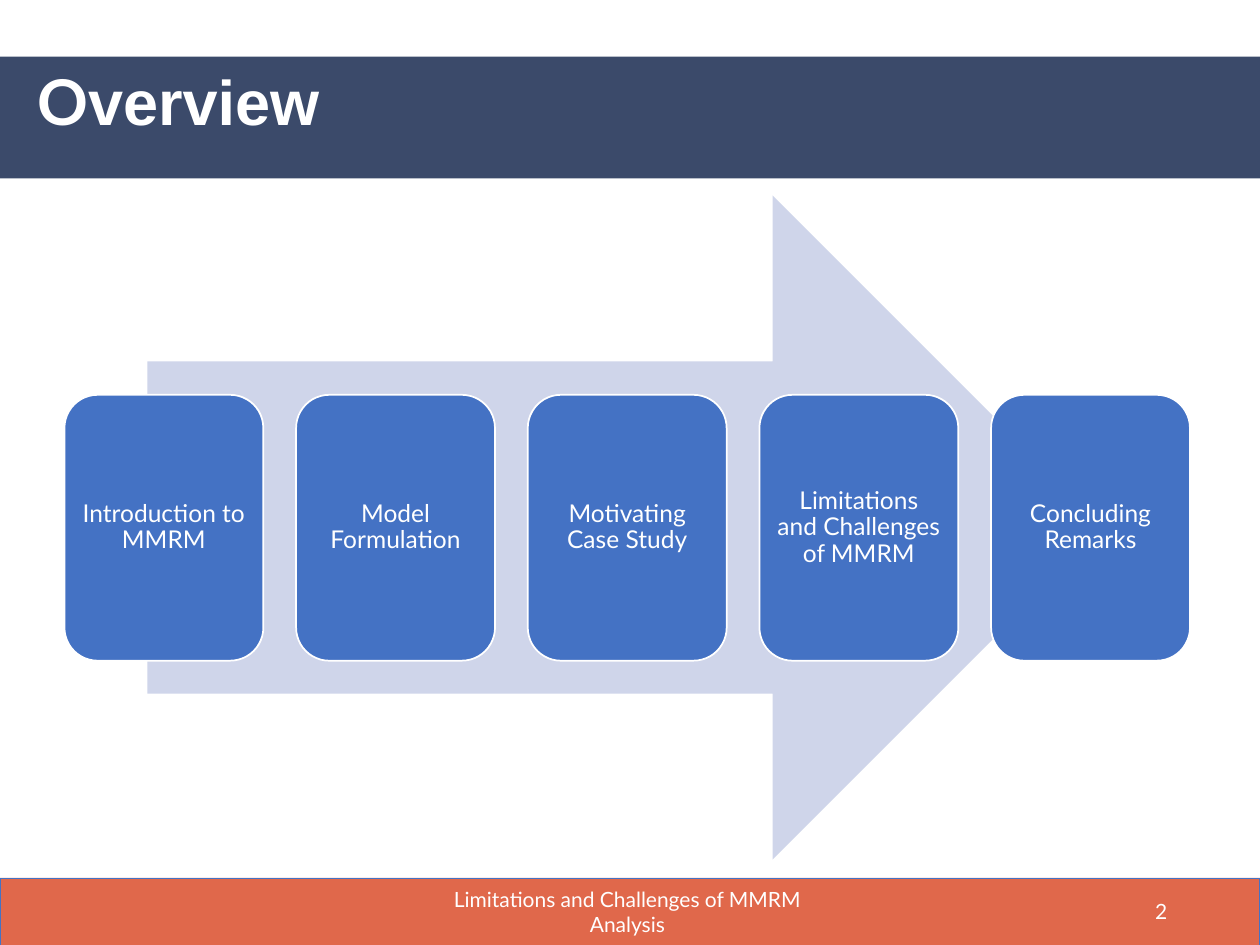
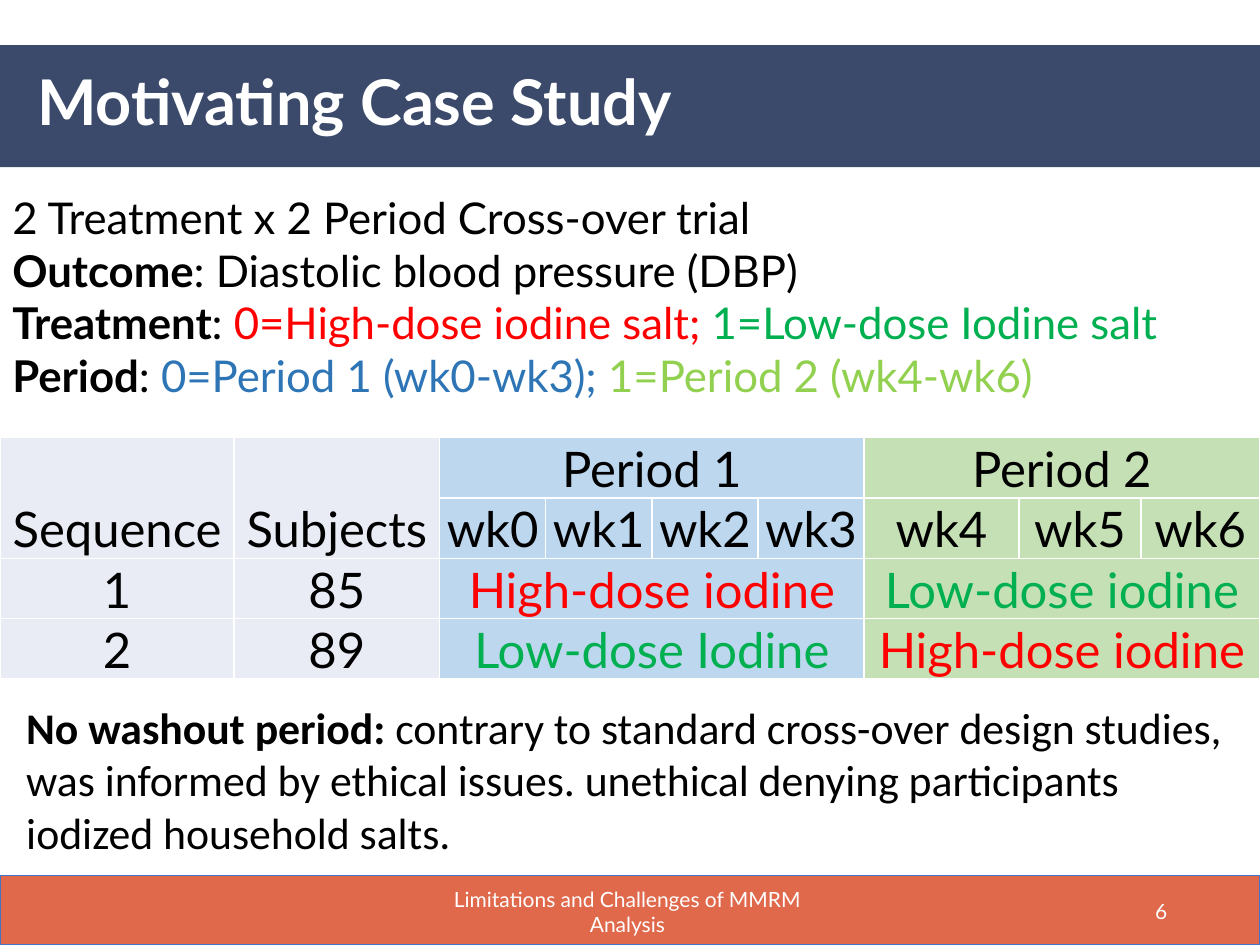
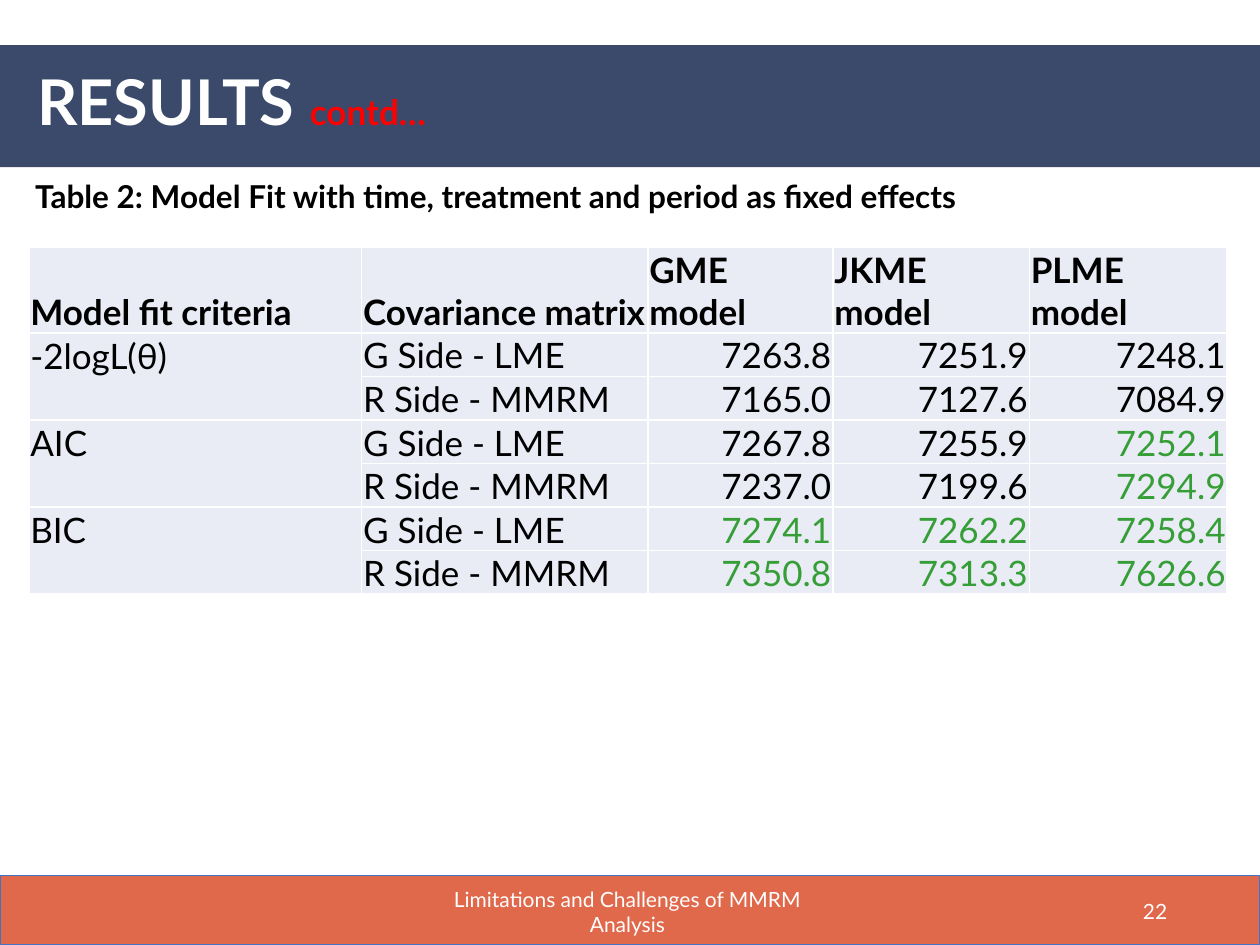
import pptx
import pptx.util
import pptx.dml.color
import pptx.enum.shapes
import pptx.enum.text

Cm = pptx.util.Cm
Pt = pptx.util.Pt
Shape = pptx.enum.shapes.MSO_SHAPE
Align = pptx.enum.text.PP_ALIGN
Anchor = pptx.enum.text.MSO_ANCHOR
GROW = {"auto_size": pptx.enum.text.MSO_AUTO_SIZE.SHAPE_TO_FIT_TEXT}
MID = {"vertical_anchor": Anchor.MIDDLE}
BOLD = {"bold": True}

HUES = {
    "white": "FFFFFF", "black": "000000", "navy": "3B4A6A", "coral": "E0684B",
    "blue": "4472C4", "arrow": "CFD5EA", "pale": "E9EBF5", "sky": "BDD7EE",
    "mint": "C5E0B4", "red": "FF0000", "green": "00B050", "azure": "2E75B6",
    "lime": "92D050", "leaf": "359E37",
}


def hue(name):
    return pptx.dml.color.RGBColor.from_string(HUES[name])


def put(item, vals):
    for key, val in vals.items():
        setattr(item, key, val)


def inset(side, base=None):
    base = side if base is None else base
    return {"margin_left": Cm(side), "margin_right": Cm(side),
            "margin_top": Cm(side), "margin_bottom": Cm(base)}


class Deck:
    def __init__(self):
        self.show = pptx.Presentation()
        put(self.show, {"slide_width": Cm(25.4), "slide_height": Cm(19.05)})
        self.slide = None

    def page(self, num, title, band=0.91, foot=17.65, wide=24.9, tall=1.8):
        self.slide = self.show.slides.add_slide(self.show.slide_layouts[6])
        self.shape(Shape.RECTANGLE, (0, foot, 25.4, 1.4), "coral", "blue", 0.5)
        self.shape(Shape.RECTANGLE, (0, band, 25.4, 2.46), "navy")
        self.text((0.5, 1.14, wide, tall), [title], 36, "white", GROW, look=BOLD)
        self.text((8.36, 17.86, 8.58, 1.02),
                  [["Limitations and Challenges of MMRM Analysis"]],
                  12, "white", MID, Align.CENTER)
        self.text((18.06, 17.86, 5.72, 1.02), [[num]], 12, "white", MID, Align.RIGHT)

    def words(self, frame, lines, size, tint, para=None, look=None):
        for i, line in enumerate(lines):
            part = frame.add_paragraph() if i else frame.paragraphs[0]
            put(part, para or {})
            for bit in line:
                words, more = bit if isinstance(bit, tuple) else (bit, {})
                vals = {"name": "Lato", "size": Pt(size), "bold": False,
                        "tint": tint, **(look or {}), **more}
                run = part.add_run()
                run.text = words
                run.font.color.rgb = hue(vals.pop("tint"))
                put(run.font, vals)

    def text(self, box, lines, size, tint="black", form=None, align=Align.LEFT, look=None):
        frame = self.slide.shapes.add_textbox(*map(Cm, box)).text_frame
        put(frame, {"word_wrap": True, **(form or {})})
        self.words(frame, lines, size, tint, {"alignment": align}, look)

    def shape(self, kind, box, fill, line=None, width=1):
        item = self.slide.shapes.add_shape(kind, *map(Cm, box))
        item.shadow.inherit = False
        item.fill.solid()
        item.fill.fore_color.rgb = hue(fill)
        if line:
            item.line.color.rgb = hue(line)
            item.line.width = Pt(width)
        else:
            item.line.fill.background()
        return item

    def card(self, box, words):
        item = self.shape(Shape.ROUNDED_RECTANGLE, box, "blue", "white")
        put(item.text_frame, {"word_wrap": True, **MID, **inset(0.15)})
        self.words(item.text_frame, [[words]], 14, "white",
                   {"alignment": Align.CENTER, "line_spacing": 0.9})

    def table(self, left, top, cols, rows, data, spans, size, style):
        box = map(Cm, (left, top, sum(cols), sum(rows)))
        grid = self.slide.shapes.add_table(len(rows), len(cols), *box).table
        put(grid, {"first_row": False, "horz_banding": False})
        for col, width in zip(grid.columns, cols):
            col.width = Cm(width)
        for row, height in zip(grid.rows, rows):
            row.height = Cm(height)
        for r, line in enumerate(data):
            for c, words in enumerate(line):
                cell = grid.cell(r, c)
                fill, align, anchor, look = style(r, c, words)
                put(cell, {"vertical_anchor": anchor, **inset(0.03, 0)})
                cell.fill.solid()
                cell.fill.fore_color.rgb = hue(fill)
                if words:
                    self.words(cell.text_frame, [[words]], size, "black",
                               {"alignment": align}, look)
        for r, c, down, over in spans:
            grid.cell(r, c).merge(grid.cell(r + down - 1, c + over - 1))


def trial(r, c, words):
    fill = "pale" if c < 2 else "sky" if c < 6 else "mint"
    tint = {"High": "red", "Low-": "green"}.get(words[:4], "black")
    return fill, Align.CENTER, Anchor.BOTTOM, {"tint": tint}


def fit(r, c, words):
    align = Align.RIGHT if r and c > 1 else Align.LEFT
    anchor = Anchor.TOP if r and c == 0 else Anchor.BOTTOM
    leaf = c > 1 and r > 4 or c == 4 and r > 2
    return "pale", align, anchor, {"bold": r == 0, "tint": "leaf" if leaf else "black"}


def main():
    deck = Deck()

    deck.page("2", ["O", ("verview", {"name": "Arial"})], 1.14, 17.7, 19.74)
    deck.shape(Shape.RIGHT_ARROW, (2.97, 3.94, 19.3, 13.39), "arrow")
    steps = ["Introduction to MMRM", "Model Formulation", "Motivating Case Study",
             "Limitations and Challenges of MMRM", "Concluding Remarks"]
    for i, step in enumerate(steps):
        deck.card((1.3 + 4.67 * i, 7.96, 4.01, 5.36), step)

    deck.page("6", ["Motivating Case Study"])
    weeks = [f"wk{i}" for i in range(7)]
    data = [
        ["Sequence", "Subjects", "Period 1", "", "", "", "Period 2", "", ""],
        ["", "", *weeks],
        ["1", "85", "High-dose iodine", "", "", "", "Low-dose iodine", "", ""],
        ["2", "89", "Low-dose Iodine", "", "", "", "High-dose iodine", "", ""],
    ]
    spans = [(0, 0, 2, 1), (0, 1, 2, 1)]
    spans += [(r, c, 1, n) for r in (0, 2, 3) for c, n in ((2, 4), (6, 3))]
    deck.table(0, 8.82, [4.72, 4.14] + [2.14] * 4 + [3.12, 2.46, 2.39],
               [1.2] * 4, data, spans, 28, trial)
    deck.text((0, 3.73, 25.4, 4.52), [
        ["2 Treatment x 2 Period Cross-over trial"],
        [("Outcome", BOLD), ": Diastolic blood pressure (DBP)"],
        [("Treatment", BOLD), ": ", ("0=High-dose iodine salt; ", {"tint": "red"}),
         ("1=Low-dose Iodine salt", {"tint": "green"})],
        [("Period", BOLD), ": ", ("0=Period 1 (wk0-wk3); ", {"tint": "azure"}),
         ("1=Period 2 (wk4-wk6)", {"tint": "lime"})],
    ], 25, form=GROW)
    deck.text((0.28, 14, 24.97, 3.45), [[
        ("No washout period: ", BOLD),
        "contrary to standard cross-over design studies, was informed by ethical "
        "issues. unethical denying participants iodized household salts.",
    ]], 25, form=GROW, look={"name": "Calibri"})

    deck.page("22", ["RESULTS ", ("contd…", {"size": Pt(20), "tint": "red"})], tall=2.64)
    deck.text((0.46, 3.45, 24.23, 1.02),
              [["Table 2: Model Fit with time, treatment and period as fixed effects"]],
              18, form=GROW, look=BOLD)
    side, mixed = "G Side - LME", "R Side - MMRM"
    data = [
        ["Model fit criteria", "Covariance matrix", "GME model", "JKME model", "PLME model"],
        ["-2logL(θ)", side, "7263.8", "7251.9", "7248.1"],
        ["", mixed, "7165.0", "7127.6", "7084.9"],
        ["AIC", side, "7267.8", "7255.9", "7252.1"],
        ["", mixed, "7237.0", "7199.6", "7294.9"],
        ["BIC", side, "7274.1", "7262.2", "7258.4"],
        ["", mixed, "7350.8", "7313.3", "7626.6"],
    ]
    deck.table(0.58, 4.98, [6.71, 5.77, 3.73, 3.96, 3.99], [1.73] + [0.86] * 6,
               data, [(r, 0, 2, 1) for r in (1, 3, 5)], 20, fit)

    deck.show.save("out.pptx")


if __name__ == "__main__":
    main()
